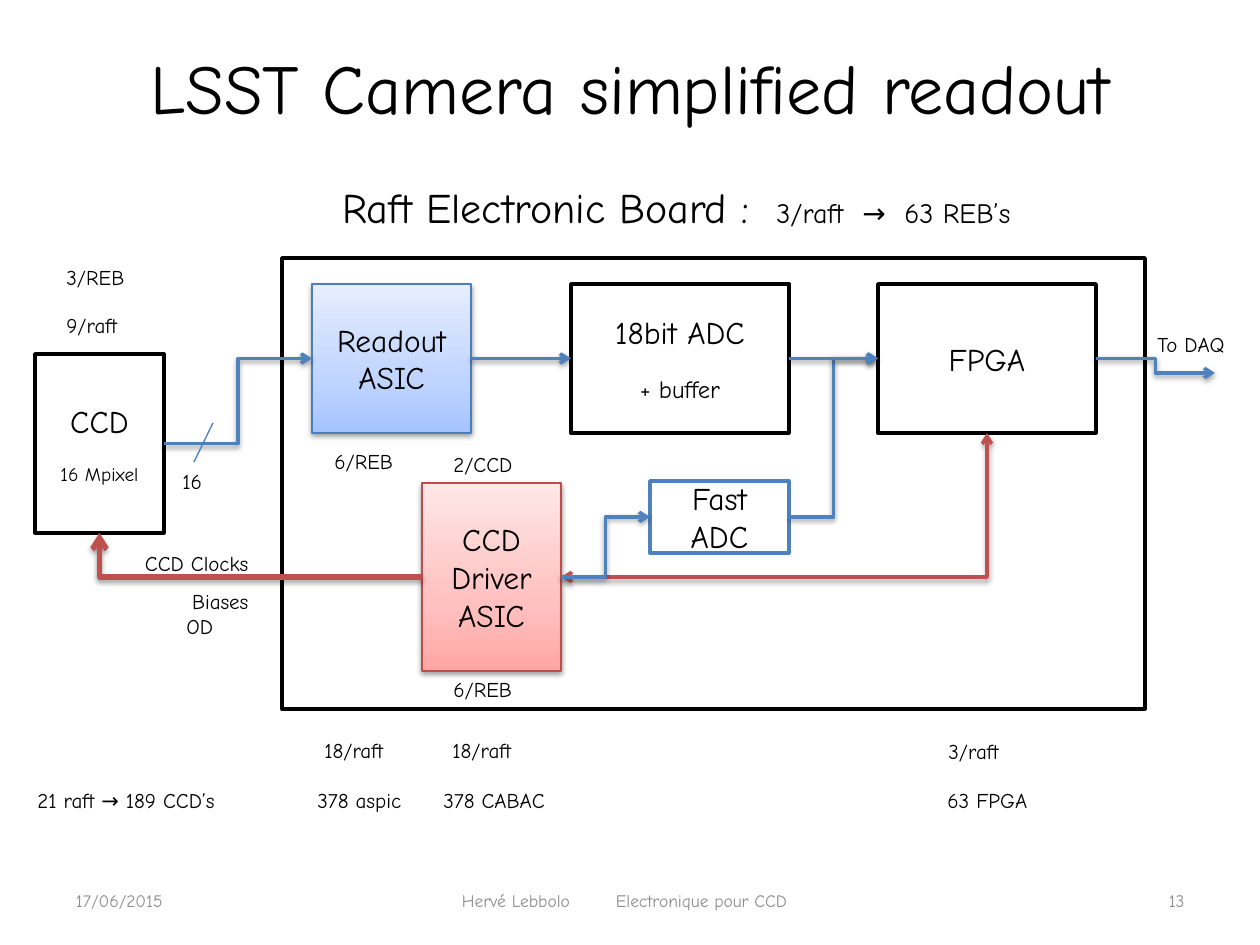
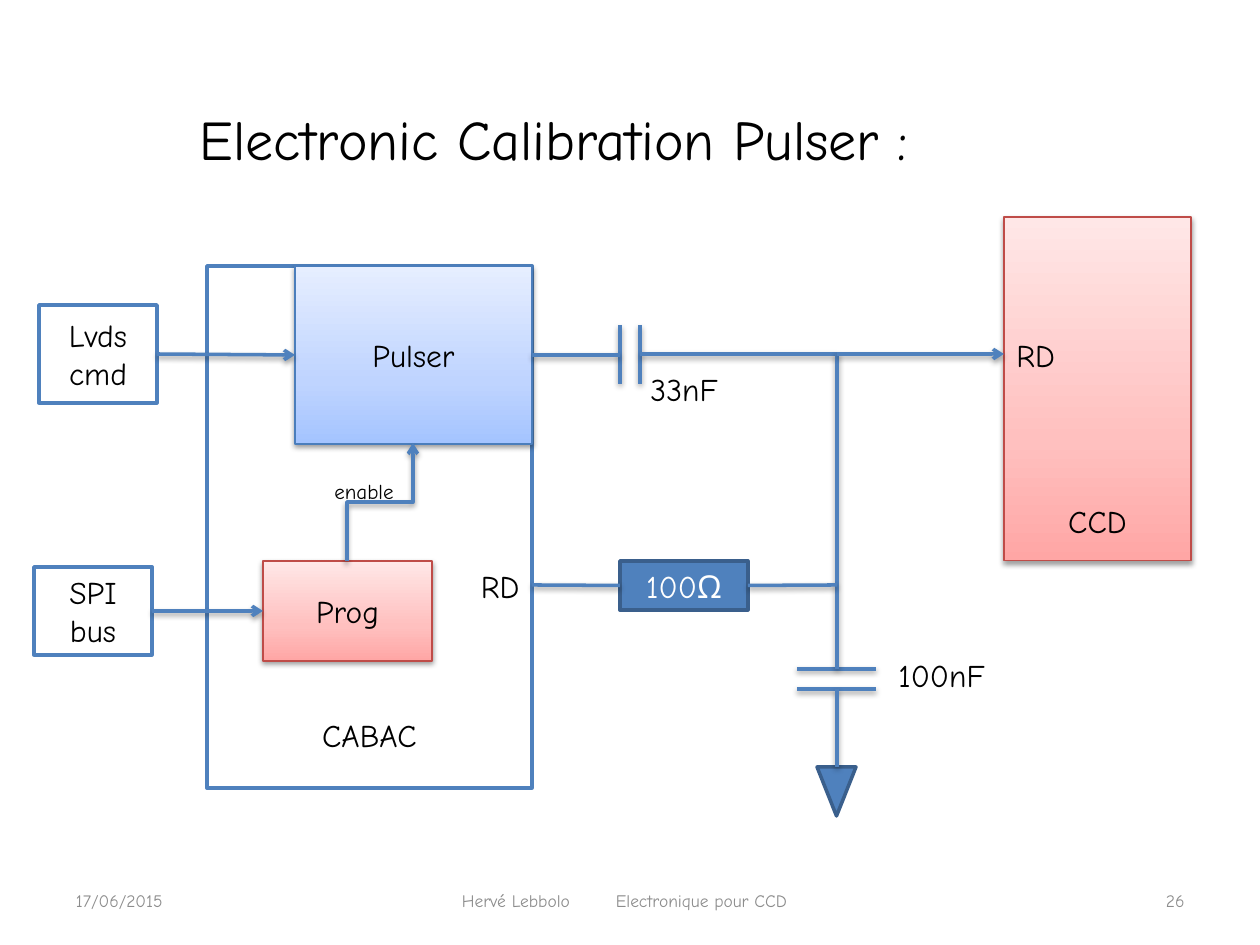
from copy import deepcopy

from pptx import Presentation
from pptx.dml.color import RGBColor
from pptx.enum.shapes import MSO_CONNECTOR, MSO_SHAPE
from pptx.enum.text import MSO_ANCHOR, MSO_AUTO_SIZE, PP_ALIGN
from pptx.oxml import parse_xml
from pptx.oxml.ns import nsdecls, qn
from pptx.oxml.xmlchemy import OxmlElement
from pptx.util import Pt

PX = 914400 // 126
FONT = "Comic Neue"
COLORS = {
    "black": "000000", "white": "FFFFFF", "grey": "8C8C8C",
    "blue": "4F81BD", "red": "C0504D", "navy": "3A5F8C",
    "blue edge": "4B7EBC", "red edge": "BF4C48",
}
RGB = {name: RGBColor.from_string(value) for name, value in COLORS.items()}
GRADIENTS = {
    "blue fade": ("A4C4FF", "BFD4FF", "E6EEFF"),
    "red fade": ("FFA6A5", "FFC0BF", "FFE7E7"),
}
SHADOW = (
    f'<a:outerShdw {nsdecls("a")} blurRad="40000" dist="20000" dir="5400000" '
    'rotWithShape="0"><a:srgbClr val="000000"><a:alpha val="38000"/>'
    '</a:srgbClr></a:outerShdw>'
)
TOP, LEFT, BOTTOM, RIGHT = range(4)  # connection sites of a rectangle


def box(s, text, x, y, w, h, size=18, color="black", align=PP_ALIGN.CENTER,
        fill=None, line=None, width=2, kind=MSO_SHAPE.RECTANGLE, tabs=()):
    """Add a filled shape, or a plain text box when there is no fill."""
    area = [v * PX for v in (x, y, w, h)]
    if fill:
        sp = s.shapes.add_shape(kind, *area)
        sp.shadow.inherit = False
        if fill in GRADIENTS:
            sp.fill.gradient()
            sp.fill.gradient_angle = 90
            stops = sp._element.spPr.find(".//" + qn("a:gsLst"))
            stops.insert(1, deepcopy(stops[0]))
            for stop, position, shade in zip(sp.fill.gradient_stops,
                                             (0, 0.35, 1), GRADIENTS[fill]):
                stop.position = position
                stop.color.rgb = RGBColor.from_string(shade)
            sp._element.spPr.find(qn("a:effectLst")).append(parse_xml(SHADOW))
        else:
            sp.fill.solid()
            sp.fill.fore_color.rgb = RGB[fill]
        sp.line.color.rgb = RGB[line]
        sp.line.width = Pt(width)
    else:
        sp = s.shapes.add_textbox(*area)
    tf = sp.text_frame
    tf.word_wrap = bool(fill or tabs)
    if not tf.word_wrap:
        tf.auto_size = MSO_AUTO_SIZE.SHAPE_TO_FIT_TEXT
    tf.vertical_anchor = MSO_ANCHOR.MIDDLE if fill else MSO_ANCHOR.TOP
    tf.text = text
    for p in tf.paragraphs:
        p.alignment = align
        if tabs:
            stops = OxmlElement("a:tabLst")
            for pos in tabs:
                tab = OxmlElement("a:tab")
                tab.set("pos", str(pos * PX))
                tab.set("algn", "l")
                stops.append(tab)
            p._p.get_or_add_pPr().append(stops)
        for r in p.runs:
            r.font.name = FONT
            r.font.size = Pt(size)
            r.font.color.rgb = RGB[color]
    return sp


def wire(s, start, end, color="blue", width=2, kind=MSO_CONNECTOR.STRAIGHT,
         arrows=(), shadow=True):
    """Join two ends, each an (x, y) point or a (shape, site) pair."""
    c = s.shapes.add_connector(kind, 0, 0, 0, 0)
    if isinstance(start[0], int):
        c.begin_x, c.begin_y = start[0] * PX, start[1] * PX
    else:
        c.begin_connect(*start)
    if isinstance(end[0], int):
        c.end_x, c.end_y = end[0] * PX, end[1] * PX
    else:
        c.end_connect(*end)
    c.line.color.rgb = RGB[color]
    c.line.width = Pt(width)
    spPr = c._element.spPr
    for tag in arrows:
        arrow = OxmlElement(tag)
        arrow.set("type", "arrow")
        spPr.find(qn("a:ln")).append(arrow)
    effects = OxmlElement("a:effectLst")
    if shadow:
        effects.append(parse_xml(SHADOW))
    spPr.append(effects)
    return c


prs = Presentation()
prs.slide_width, prs.slide_height = 1260 * PX, 945 * PX
ELBOW = MSO_CONNECTOR.ELBOW
TO_END = ("a:tailEnd",)
BOTH = ("a:headEnd", "a:tailEnd")
BLUE = dict(fill="blue fade", line="blue edge", width=0.75)
RED = dict(fill="red fade", line="red edge", width=0.75)
BLACK_FRAME = dict(fill="white", line="black")
BLUE_FRAME = dict(fill="white", line="blue")

# Titles and footers
slides = []
for number, title, area, size, align in (
        ("13", "LSST Camera simplified readout", (63, 38, 1134, 137), 40, PP_ALIGN.CENTER),
        ("26", "Electronic Calibration Pulser :", (187, 98, 809, 81), 32, PP_ALIGN.LEFT)):
    s = prs.slides.add_slide(prs.slide_layouts[5])
    slides.append(s)
    sp = s.shapes.title
    sp.left, sp.top, sp.width, sp.height = [v * PX for v in area]
    tf = sp.text_frame
    tf.text = title
    tf.auto_size = MSO_AUTO_SIZE.NONE
    tf.vertical_anchor = MSO_ANCHOR.TOP
    p = tf.paragraphs[0]
    p.alignment = align
    r = p.runs[0]
    r.font.name, r.font.size = FONT, Pt(size)
    r.font.color.rgb = RGB["black"]
    for text, x, w, align, inset, tabs in (
            ("17/06/2015", 63, 190, PP_ALIGN.LEFT, 13, ()),
            ("Hervé Lebbolo\tElectronique pour CCD", 292, 665, PP_ALIGN.LEFT, 170, (154,)),
            (number, 1047, 150, PP_ALIGN.RIGHT, 13, ())):
        sp = box(s, text, x, 876, w, 50, 10, "grey", align, tabs=tabs)
        tf = sp.text_frame
        tf.margin_left = inset * PX
        tf.word_wrap, tf.auto_size = True, MSO_AUTO_SIZE.NONE
        tf.vertical_anchor = MSO_ANCHOR.MIDDLE
readout, calibration = slides

# Readout: blocks
s = readout
box(s, "", 282, 258, 863, 451, **BLACK_FRAME)
ccd = box(s, "CCD\n16 Mpixel", 35, 354, 129, 179, **BLACK_FRAME)
asic = box(s, "Readout ASIC", 312, 284, 159, 149, **BLUE)
adc = box(s, "18bit ADC\n+ buffer", 571, 284, 218, 149, **BLACK_FRAME)
fpga = box(s, "FPGA", 878, 284, 218, 149, **BLACK_FRAME)
driver = box(s, "CCD\nDriver\nASIC", 422, 483, 139, 188, **RED)
fast_adc = box(s, "Fast\nADC", 650, 481, 139, 72, **BLUE_FRAME)
for sp, size in ((ccd, 11), (adc, 14)):
    p = sp.text_frame.paragraphs[1]
    p.space_before = Pt(13)
    p.runs[0].font.size = Pt(size)

# Readout: signal and clock paths
wire(s, (ccd, RIGHT), (asic, LEFT), kind=ELBOW, arrows=TO_END)
wire(s, (213, 423), (194, 462), "blue edge", 0.75, shadow=False)
wire(s, (fpga, RIGHT), (1215, 373), kind=ELBOW, arrows=TO_END)
for start, end, color, width, arrows in (
        ((driver, LEFT), (ccd, BOTTOM), "red", 3, TO_END),
        ((driver, RIGHT), (fpga, BOTTOM), "red", 2, BOTH)):
    c = wire(s, start, end, color, width, ELBOW, arrows)
    c._element.spPr.find(qn("a:prstGeom")).set("prst", "bentConnector2")
wire(s, (driver, RIGHT), (fast_adc, LEFT), kind=ELBOW, arrows=TO_END)
wire(s, (fast_adc, RIGHT), (fpga, LEFT), kind=ELBOW, arrows=TO_END)
wire(s, (asic, RIGHT), (adc, LEFT), arrows=TO_END)
wire(s, (adc, RIGHT), (fpga, LEFT), arrows=TO_END)

# Readout: heading and counts
sp = box(s, "Raft Electronic Board :", 330, 175, 772, 63, 24,
         align=PP_ALIGN.LEFT, tabs=(434, 520, 562))
r = sp.text_frame.paragraphs[0].add_run()
r.text = "\t3/raft\t→\t63 REB’s"
r.font.name, r.font.size = FONT, Pt(16)
r.font.color.rgb = RGB["black"]
for text, x, y, w in (
        ("3/REB", 54, 258, 89), ("9/raft", 54, 306, 91), ("16", 170, 462, 48),
        ("6/REB", 322, 442, 89), ("2/CCD", 441, 445, 91), ("6/REB", 441, 670, 89),
        ("18/raft", 312, 731, 101), ("18/raft", 440, 731, 101),
        ("3/raft", 936, 732, 91), ("To DAQ", 1145, 325, 107), ("OD", 174, 607, 52)):
    box(s, text, x, y, w, 38, 12, align=PP_ALIGN.LEFT)
sp = box(s, "CCD Clocks\nBiases", 126, 532, 135, 89, 12, align=PP_ALIGN.RIGHT)
for p in sp.text_frame.paragraphs:
    p.line_spacing = 1.5
box(s, "21 raft → 189 CCD’s\t378 aspic\t378 CABAC\t63 FPGA", 25, 781, 1028, 38,
    12, align=PP_ALIGN.LEFT, tabs=(280, 406, 910))

# Calibration: blocks
s = calibration
cabac = box(s, "CABAC", 207, 266, 325, 522, **BLUE_FRAME)
pulser = box(s, "Pulser", 295, 266, 237, 178, **BLUE)
prog = box(s, "Prog", 263, 561, 169, 100, **RED)
ccd = box(s, "CCD", 1004, 217, 187, 344, **RED)
lvds = box(s, "Lvds\ncmd", 39, 305, 118, 98, **BLUE_FRAME)
spi = box(s, "SPI bus", 34, 567, 118, 88, **BLUE_FRAME)
resistor = box(s, "100Ω", 620, 561, 128, 49, color="white", fill="blue", line="navy")
ground = box(s, "", 817, 767, 39, 49, fill="blue", line="navy",
             kind=MSO_SHAPE.ISOSCELES_TRIANGLE)
ground.rotation = 180
for sp, inset in ((cabac, 34), (ccd, 21)):
    sp.text_frame.vertical_anchor = MSO_ANCHOR.BOTTOM
    sp.text_frame.margin_bottom = inset * PX

# Calibration: capacitor plates, then wires
for x in (620, 640):
    wire(s, (x, 325), (x, 384))
for y in (669, 689):
    wire(s, (797, y), (876, y))
for start, end in (
        ((pulser, RIGHT), (620, 355)), ((640, 354), (837, 354)),
        ((837, 354), (837, 669)), ((837, 689), (837, 767)),
        ((532, 585), (resistor, LEFT)), ((resistor, RIGHT), (837, 585))):
    wire(s, start, end)
for start, end in (((837, 354), (1004, 354)), ((lvds, RIGHT), (pulser, LEFT)),
                   ((spi, RIGHT), (prog, LEFT))):
    wire(s, start, end, arrows=TO_END)

# The enable wire leaves upwards, so its frame is turned a quarter
c = wire(s, (prog, TOP), (pulser, BOTTOM), kind=ELBOW, arrows=TO_END)
xfrm = c._element.spPr.find(qn("a:xfrm"))
for flip in ("flipH", "flipV"):
    xfrm.attrib.pop(flip, None)
xfrm.set("rot", "16200000")
c.left, c.top, c.width, c.height = [v * PX for v in (321, 469, 118, 66)]

# Calibration: labels
for text, x, y, w, h, size, align in (
        ("RD", 403, 561, 129, 49, 18, PP_ALIGN.RIGHT),
        ("RD", 1004, 330, 129, 49, 18, PP_ALIGN.LEFT),
        ("100nF", 886, 650, 115, 50, 18, PP_ALIGN.LEFT),
        ("33nF", 638, 364, 100, 50, 18, PP_ALIGN.LEFT),
        ("enable", 322, 472, 89, 38, 12, PP_ALIGN.LEFT)):
    sp = box(s, text, x, y, w, h, size, align=align)
    if text == "RD":
        sp.text_frame.word_wrap = True

prs.save("out.pptx")
